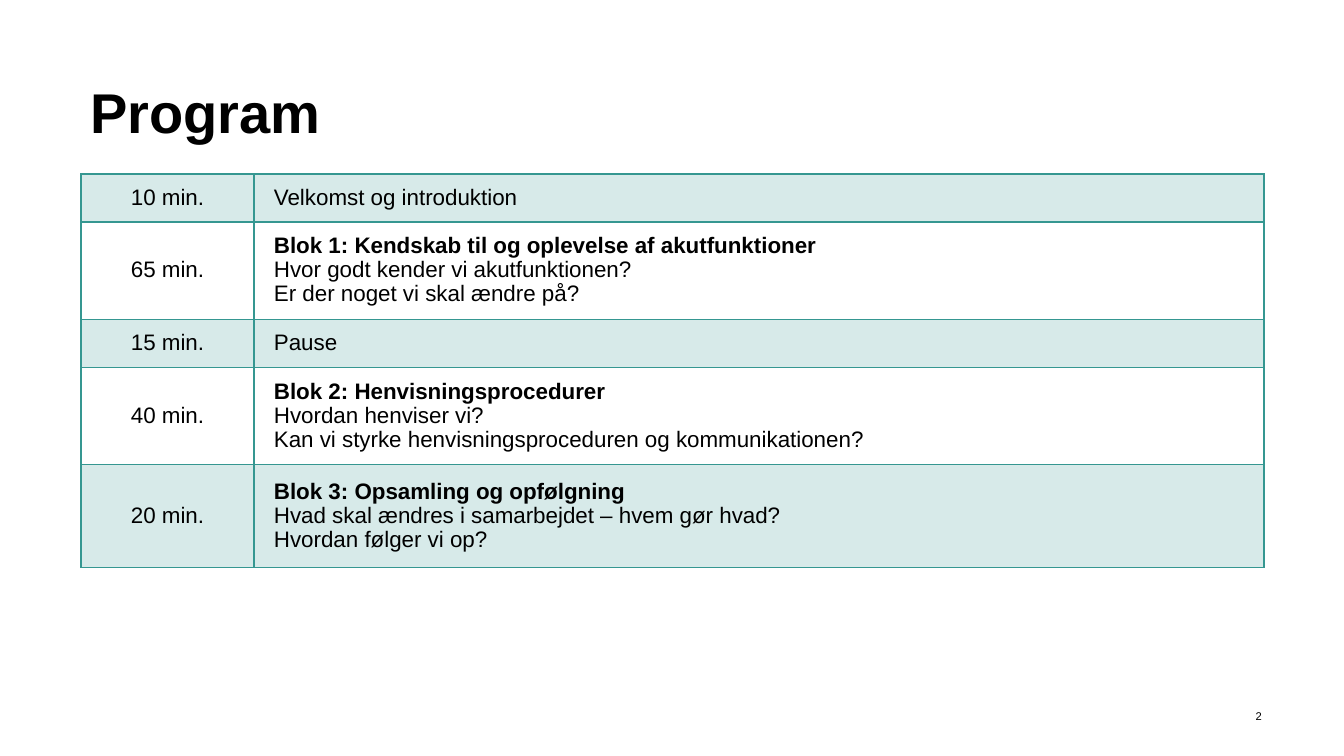
from dataclasses import dataclass

from lxml.etree import SubElement
from pptx import Presentation
from pptx.dml.color import RGBColor
from pptx.enum.text import MSO_ANCHOR as Anchor, PP_ALIGN as Align
from pptx.oxml.ns import qn
from pptx.util import Pt

PX = 914400 / 100.8
BLACK = RGBColor(0x00, 0x00, 0x00)
WHITE = RGBColor(0xFF, 0xFF, 0xFF)
TEAL = RGBColor(0x35, 0x97, 0x91)
PALE_TEAL = RGBColor(0xD7, 0xEA, 0xE9)
FONT = "Arial"
COLUMN_WIDTHS = (173, 1010)


@dataclass
class Session:
    duration: str
    height: int
    lines: list[str]


SESSIONS = [
    Session("10 min.", 48, ["Velkomst og introduktion"]),
    Session("65 min.", 94, ["Blok 1: Kendskab til og oplevelse af akutfunktioner",
                            "Hvor godt kender vi akutfunktionen?",
                            "Er der noget vi skal ændre på?"]),
    Session("15 min.", 48, ["Pause"]),
    Session("40 min.", 94, ["Blok 2: Henvisningsprocedurer",
                            "Hvordan henviser vi?",
                            "Kan vi styrke henvisningsproceduren og kommunikationen?"]),
    Session("20 min.", 103, ["Blok 3: Opsamling og opfølgning",
                             "Hvad skal ændres i samarbejdet – hvem gør hvad?",
                             "Hvordan følger vi op?"]),
]


def px(length: int) -> int:
    return round(length * PX)


def set_margins(target, horizontal: int, vertical: int) -> None:
    target.margin_left = target.margin_right = px(horizontal)
    target.margin_top = target.margin_bottom = px(vertical)


def write_paragraph(para, text: str, size: int, bold: bool, align: Align, spacing: float) -> None:
    para.text = text
    para.alignment = align
    para.line_spacing = spacing
    for run in para.runs:
        run.font.name = FONT
        run.font.size = Pt(size)
        run.font.bold = bold
        run.font.color.rgb = BLACK


def add_text(slide, area: tuple[int, int, int, int], margins: tuple[int, int], text: str,
             size: int, bold: bool, align: Align, spacing: float) -> None:
    frame = slide.shapes.add_textbox(*map(px, area)).text_frame
    frame.word_wrap = True
    frame.vertical_anchor = Anchor.BOTTOM
    set_margins(frame, *margins)
    write_paragraph(frame.paragraphs[0], text, size, bold, align, spacing)


def add_borders(cell) -> None:
    """Draw all four edges; they must precede the cell's fill in its XML."""
    properties = cell._tc.get_or_add_tcPr()
    for edge in ("a:lnL", "a:lnR", "a:lnT", "a:lnB"):
        line = SubElement(properties, qn(edge), w=str(Pt(1)))
        fill = SubElement(line, qn("a:solidFill"))
        SubElement(fill, qn("a:srgbClr"), val=str(TEAL))


def fill_cell(cell, lines: list[str], align: Align, color: RGBColor) -> None:
    """Write the lines, with the first one as a bold heading when more follow."""
    add_borders(cell)
    cell.fill.solid()
    cell.fill.fore_color.rgb = color
    cell.vertical_anchor = Anchor.MIDDLE
    set_margins(cell, 20, 10)
    cell.text_frame.text = "\n".join(lines)
    for index, para in enumerate(cell.text_frame.paragraphs):
        heading = index == 0 and len(lines) > 1
        write_paragraph(para, lines[index], 16, heading, align, 0.96)


def add_program(slide) -> None:
    height = sum(session.height for session in SESSIONS)
    table = slide.shapes.add_table(len(SESSIONS), len(COLUMN_WIDTHS), px(81), px(174),
                                   px(sum(COLUMN_WIDTHS)), px(height)).table
    for column, width in zip(table.columns, COLUMN_WIDTHS):
        column.width = px(width)
    for index, (row, session) in enumerate(zip(table.rows, SESSIONS)):
        row.height = px(session.height)
        color = WHITE if index % 2 else PALE_TEAL
        fill_cell(row.cells[0], [session.duration], Align.CENTER, color)
        fill_cell(row.cells[1], session.lines, Align.LEFT, color)


def main() -> None:
    deck = Presentation()
    deck.slide_width, deck.slide_height = px(1344), px(756)
    page = deck.slides.add_slide(deck.slide_layouts[6])
    add_text(page, (80, 85, 1184, 64), (10, 5), "Program", 40, True, Align.LEFT, 0.8)
    add_program(page)
    add_text(page, (1183, 707, 82, 19), (3, 3), "2", 8, False, Align.RIGHT, 1.0)
    deck.save("out.pptx")


if __name__ == "__main__":
    main()
